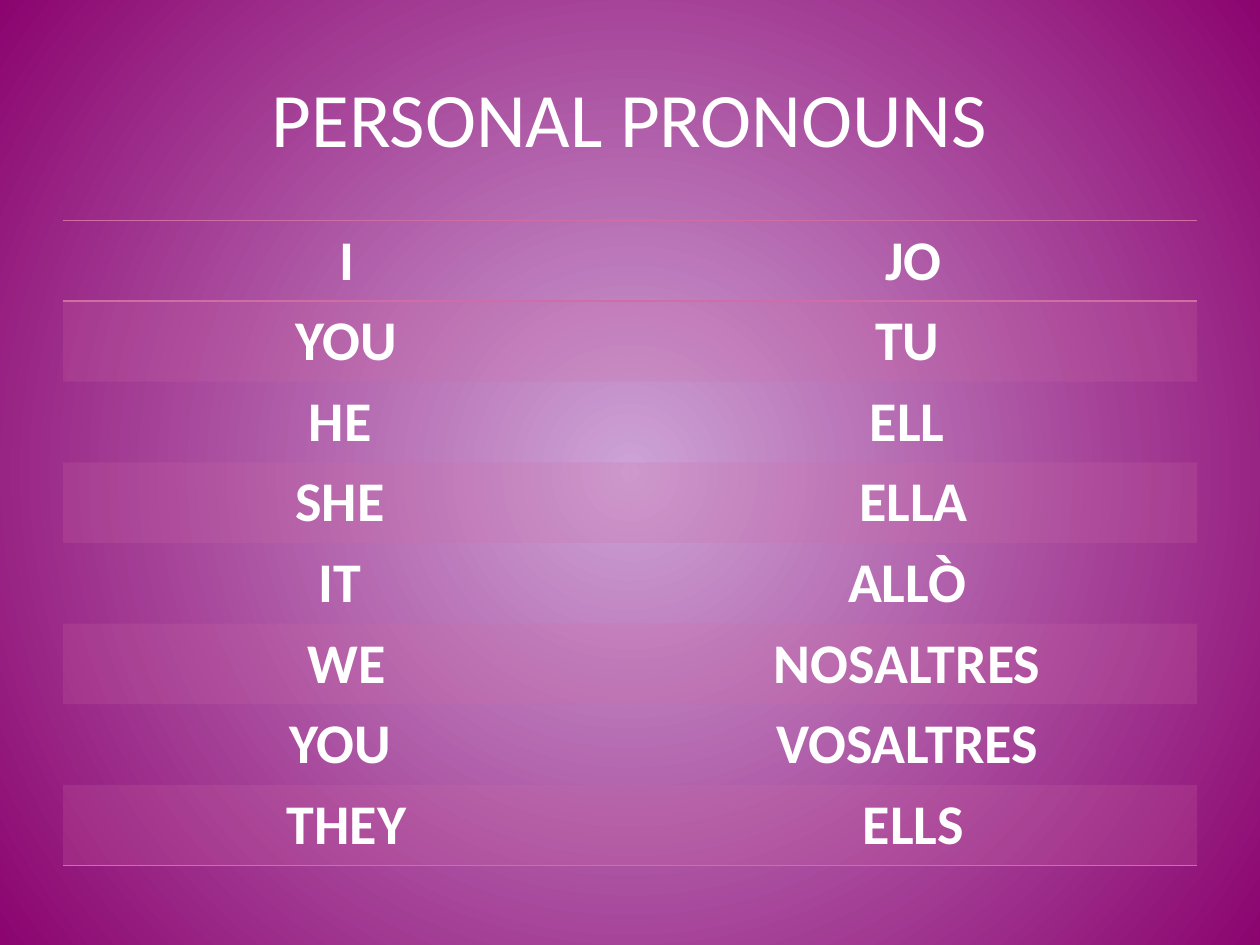
from lxml import etree
from pptx import Presentation
from pptx.dml.color import RGBColor as RGB
from pptx.enum.text import MSO_ANCHOR as ANCHOR, PP_ALIGN as ALIGN
from pptx.oxml import parse_xml
from pptx.oxml.ns import nsdecls, qn
from pptx.util import Inches, Pt

C = {"center": "CDA3D6", "edge": "8B046F", "pink": "CF6DA4", "white": "FFFFFF"}
NO_STYLE = "{2D5ABB26-0587-4C30-8999-92F81FD0307C}"
PRONOUNS = [
    ("I", "JO"),
    ("YOU", "TU "),
    ("HE ", "ELL "),
    ("SHE ", "ELLA"),
    ("IT ", "ALLÒ "),
    ("WE", "NOSALTRES "),
    ("YOU ", "VOSALTRES "),
    ("THEY", "ELLS"),
]


def add_text(tf, text, size, bold):
    p = tf.paragraphs[0]
    p.alignment = ALIGN.CENTER
    r = p.add_run()
    r.text = text
    r.font.name = "Calibri"
    r.font.size = Pt(size)
    r.font.bold = bold
    r.font.color.rgb = RGB.from_string(C["white"])


def add_border(cell, side):
    cell._tc.get_or_add_tcPr().append(parse_xml(
        f'<a:{side} {nsdecls("a")} w="12700"><a:solidFill>'
        f'<a:srgbClr val="{C["pink"]}"/></a:solidFill></a:{side}>'))


prs = Presentation()
prs.slide_width, prs.slide_height = Inches(10), Inches(7.5)
s = prs.slides.add_slide(prs.slide_layouts[6])

fill = s.background.fill
fill.gradient()
for stop, name, position in zip(fill.gradient_stops, ("center", "edge"), (0, 1)):
    stop.color.rgb = RGB.from_string(C[name])
    stop.position = position
grad = next(s._element.iter(qn("a:gradFill")))
grad.replace(grad.find(qn("a:lin")), parse_xml(
    f'<a:path {nsdecls("a")} path="circle">'
    '<a:fillToRect l="50000" t="50000" r="50000" b="50000"/></a:path>'))

title = s.shapes.add_textbox(Inches(0.5), Inches(0.3), Inches(9), Inches(1.25))
tf = title.text_frame
tf.word_wrap = True
tf.vertical_anchor = ANCHOR.MIDDLE
add_text(tf, "PERSONAL PRONOUNS", 44, False)

row_height = Inches(0.64)
last = len(PRONOUNS) - 1
table = s.shapes.add_table(len(PRONOUNS), 2, Inches(0.5), Inches(1.75),
                           Inches(9), row_height * len(PRONOUNS)).table
table._tbl.tblPr.find(qn("a:tableStyleId")).text = NO_STYLE
table.horz_banding = False

for i, pair in enumerate(PRONOUNS):
    for j, word in enumerate(pair):
        cell = table.cell(i, j)
        add_text(cell.text_frame, word, 32, True)
        if i == 0:
            add_border(cell, "lnT")
        if i in (0, last):
            add_border(cell, "lnB")
        if i % 2:
            cell.fill.solid()
            cell.fill.fore_color.rgb = RGB.from_string(C["pink"])
            color = cell._tc.tcPr.find(qn("a:solidFill")).find(qn("a:srgbClr"))
            etree.SubElement(color, qn("a:alpha"), val="20000")
        else:
            cell.fill.background()

prs.save("out.pptx")
